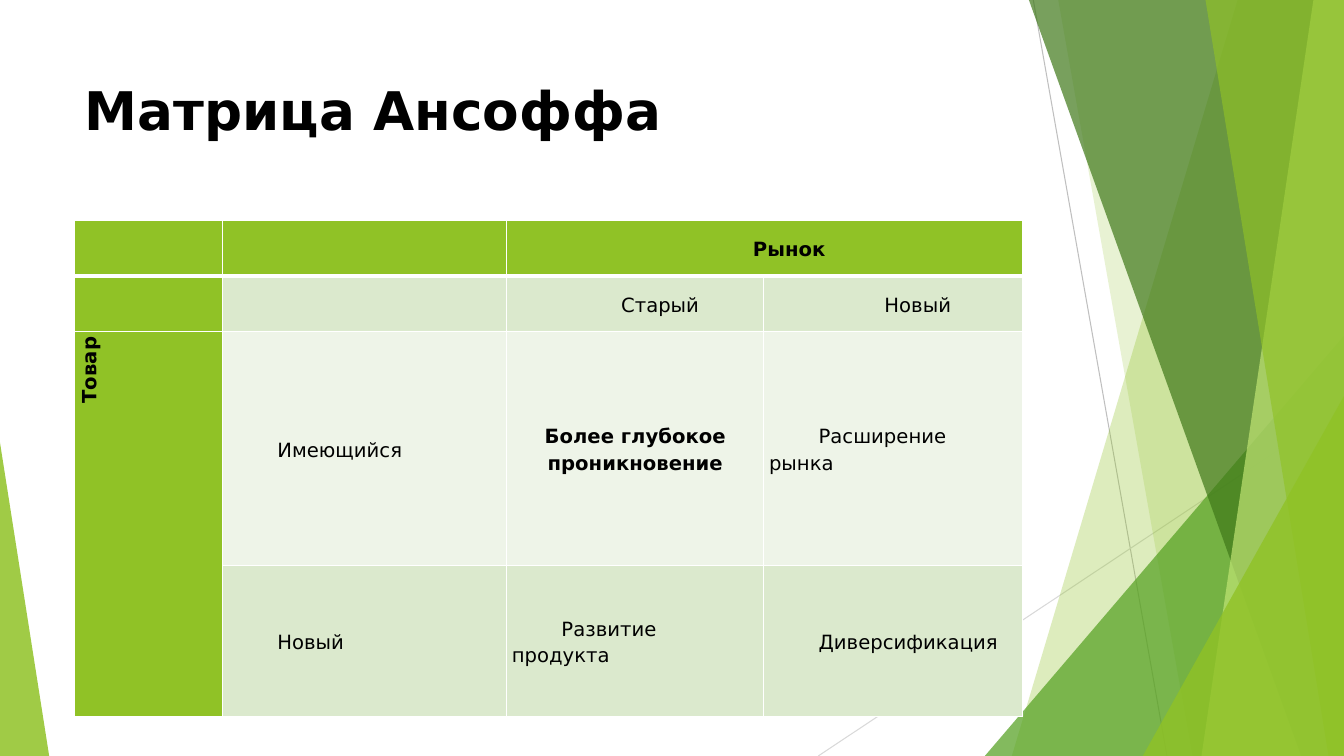
from collections import namedtuple

from lxml.etree import SubElement
from pptx import Presentation
from pptx.dml.color import RGBColor
from pptx.enum.shapes import MSO_CONNECTOR, MSO_SHAPE
from pptx.enum.text import MSO_ANCHOR, PP_ALIGN
from pptx.oxml import parse_xml
from pptx.oxml.ns import nsdecls, qn
from pptx.util import Cm, Pt

FONT = "DejaVu Sans"
BLACK = RGBColor(0x00, 0x00, 0x00)
LIME = RGBColor(0x90, 0xC2, 0x26)
PALE_LIME = RGBColor(0xC0, 0xE4, 0x74)
GREEN = RGBColor(0x54, 0xA0, 0x21)
DARK_GREEN = RGBColor(0x3F, 0x78, 0x19)
BAND = RGBColor(0xDB, 0xE9, 0xCD)
LIGHT_BAND = RGBColor(0xEE, 0xF4, 0xE8)
GREY = RGBColor(0xBF, 0xBF, 0xBF)
LIGHT_GREY = RGBColor(0xD9, 0xD9, 0xD9)

Box = namedtuple("Box", "left top width height")
SLIDE_WIDTH, SLIDE_HEIGHT = Cm(33.87), Cm(19.05)
TITLE_BOX = Box(Cm(1.88), Cm(1.7), Cm(23.88), Cm(2.39))
TABLE_BOX = Box(Cm(1.88), Cm(5.56), Cm(23.88), Cm(12.5))
FACETS_BOX = Box(Cm(20.62), Cm(0), Cm(13.25), SLIDE_HEIGHT)
CORNER_BOX = Box(Cm(0), Cm(11.15), Cm(1.24), Cm(7.9))

COLUMN_WIDTHS = [3.73, 7.16, 6.48, 6.51]
ROW_HEIGHTS = [1.4, 1.4, 5.89, 3.81]
ROW_FILLS = [LIME, BAND, LIGHT_BAND, BAND]
MATRIX = [
    ["", "", "Рынок", ""],
    ["", "", "Старый", "Новый"],
    ["Товар", "Имеющийся", "Более глубокое проникновение", "Расширение рынка"],
    ["", "Новый", "Развитие продукта", "Диверсификация"],
]
BOLD_CELLS = {(0, 2), (2, 0), (2, 2)}
PRODUCT_CELL = (2, 0)
STRATEGY_CELL = (2, 2)


def paint(shape, colour, opacity):
    """Give a shape a fill with the opacity in percent, and no line or shadow."""
    shape.shadow.inherit = False
    shape.line.fill.background()
    shape.fill.solid()
    shape.fill.fore_color.rgb = colour
    colour_element = shape.element.spPr.find(qn("a:solidFill"))[0]
    SubElement(colour_element, qn("a:alpha")).set("val", str(opacity * 1000))


def add_ray(slide, start, end, colour):
    ray = slide.shapes.add_connector(MSO_CONNECTOR.STRAIGHT, *start, *end)
    ray.line.color.rgb = colour
    ray.line.width = Pt(0.75)
    SubElement(ray.element.spPr, qn("a:effectLst"))


def add_ribbon(slide, box, top_x, bottom_x, colour, opacity):
    """Fill the box to the right of a slanted edge from top_x to bottom_x."""
    right, bottom = box.left + box.width, box.top + box.height
    start_x = box.left + Cm(top_x)
    builder = slide.shapes.build_freeform(start_x, box.top, scale=1.0)
    builder.add_line_segments(
        [(right, box.top), (right, bottom), (box.left + Cm(bottom_x), bottom)], close=True
    )
    paint(builder.convert_to_shape(), colour, opacity)


def add_wedge(slide, box, apex, colour, opacity):
    """Add a right triangle whose apex is at the left (0) or right (1) of the box."""
    wedge = slide.shapes.add_shape(MSO_SHAPE.ISOSCELES_TRIANGLE, *box)
    wedge.adjustments[0] = apex
    paint(wedge, colour, opacity)


def add_right_wedge(slide, box, left, top, colour, opacity):
    left, top = Cm(left), Cm(top)
    wedge_box = Box(box.left + left, box.top + top, box.width - left, box.height - top)
    add_wedge(slide, wedge_box, 1, colour, opacity)


def add_facets(slide, box):
    right, bottom = box.left + box.width, box.top + box.height
    add_ray(slide, (box.left + Cm(5.42), box.top), (box.left + Cm(8.79), bottom), GREY)
    add_ray(slide, (right, box.top + Cm(10.24)), (box.left, bottom), LIGHT_GREY)
    add_ribbon(slide, box, 10.57, 4.88, LIME, 30)
    add_ribbon(slide, box, 6.05, 9.43, LIME, 20)
    add_right_wedge(slide, box, 4.2, 8.46, GREEN, 72)
    add_ribbon(slide, box, 5.31, 12.17, DARK_GREEN, 70)
    add_ribbon(slide, box, 12.48, 9.66, PALE_LIME, 70)
    add_ribbon(slide, box, 9.76, 12.86, LIME, 65)
    add_right_wedge(slide, box, 8.18, 9.98, LIME, 80)


def add_text(paragraph, text, size, bold):
    run = paragraph.add_run()
    run.text = text
    run.font.name = FONT
    run.font.size = Pt(size)
    run.font.bold = bold
    run.font.color.rgb = BLACK


def fill_title(slide, box):
    title = slide.shapes.title
    title.left, title.top, title.width, title.height = box
    frame = title.text_frame
    frame.word_wrap = True
    frame.vertical_anchor = MSO_ANCHOR.TOP
    frame.margin_top = Cm(0.25)
    paragraph = frame.paragraphs[0]
    paragraph.alignment = PP_ALIGN.LEFT
    add_text(paragraph, "Матрица Ансоффа", 38, True)


def set_borders(cell, row):
    """Draw white borders, with a thick one between the header and the rows below."""
    widths = {"lnL": 1, "lnR": 1, "lnT": 3 if row == 1 else 1, "lnB": 3 if row == 0 else 1}
    properties = cell._tc.get_or_add_tcPr()
    for index, (side, width) in enumerate(widths.items()):
        border = parse_xml(
            f'<a:{side} {nsdecls("a")} w="{Pt(width)}"><a:solidFill>'
            f'<a:srgbClr val="FFFFFF"/></a:solidFill></a:{side}>'
        )
        properties.insert(index, border)


def write_cell(cell, position, text):
    row, _ = position
    cell.vertical_anchor = MSO_ANCHOR.MIDDLE
    cell.margin_left = cell.margin_right = Cm(0.13)
    cell.margin_top = cell.margin_bottom = 0
    paragraph = cell.text_frame.paragraphs[0]
    paragraph.line_spacing = 1.15
    paragraph.alignment = PP_ALIGN.LEFT
    if row < 2 or position == STRATEGY_CELL:
        paragraph.alignment = PP_ALIGN.CENTER
    indents = paragraph._p.get_or_add_pPr()
    if position != STRATEGY_CELL:
        indents.set("indent", str(Cm(1.25)))
    if position == PRODUCT_CELL:
        paragraph.alignment = PP_ALIGN.RIGHT
        indents.set("marL", str(Cm(0.2)))
        cell._tc.get_or_add_tcPr().set("vert", "vert270")
    add_text(paragraph, text, 14, position in BOLD_CELLS)


def add_matrix(slide, box):
    frame = slide.shapes.add_table(len(ROW_HEIGHTS), len(COLUMN_WIDTHS), *box)
    table = frame.table
    table.horz_banding = False
    for column, width in zip(table.columns, COLUMN_WIDTHS):
        column.width = Cm(width)
    for row, height in zip(table.rows, ROW_HEIGHTS):
        row.height = Cm(height)
    table.cell(0, 2).merge(table.cell(0, 3))
    table.cell(2, 0).merge(table.cell(3, 0))
    for row, texts in enumerate(MATRIX):
        for column, text in enumerate(texts):
            cell = table.cell(row, column)
            cell.fill.solid()
            cell.fill.fore_color.rgb = LIME if column == 0 else ROW_FILLS[row]
            set_borders(cell, row)
            if text:
                write_cell(cell, (row, column), text)


def main():
    presentation = Presentation()
    presentation.slide_width, presentation.slide_height = SLIDE_WIDTH, SLIDE_HEIGHT
    slide = presentation.slides.add_slide(presentation.slide_layouts.get_by_name("Title Only"))
    add_facets(slide, FACETS_BOX)
    add_wedge(slide, CORNER_BOX, 0, LIME, 85)
    fill_title(slide, TITLE_BOX)
    add_matrix(slide, TABLE_BOX)
    presentation.save("out.pptx")


if __name__ == "__main__":
    main()
